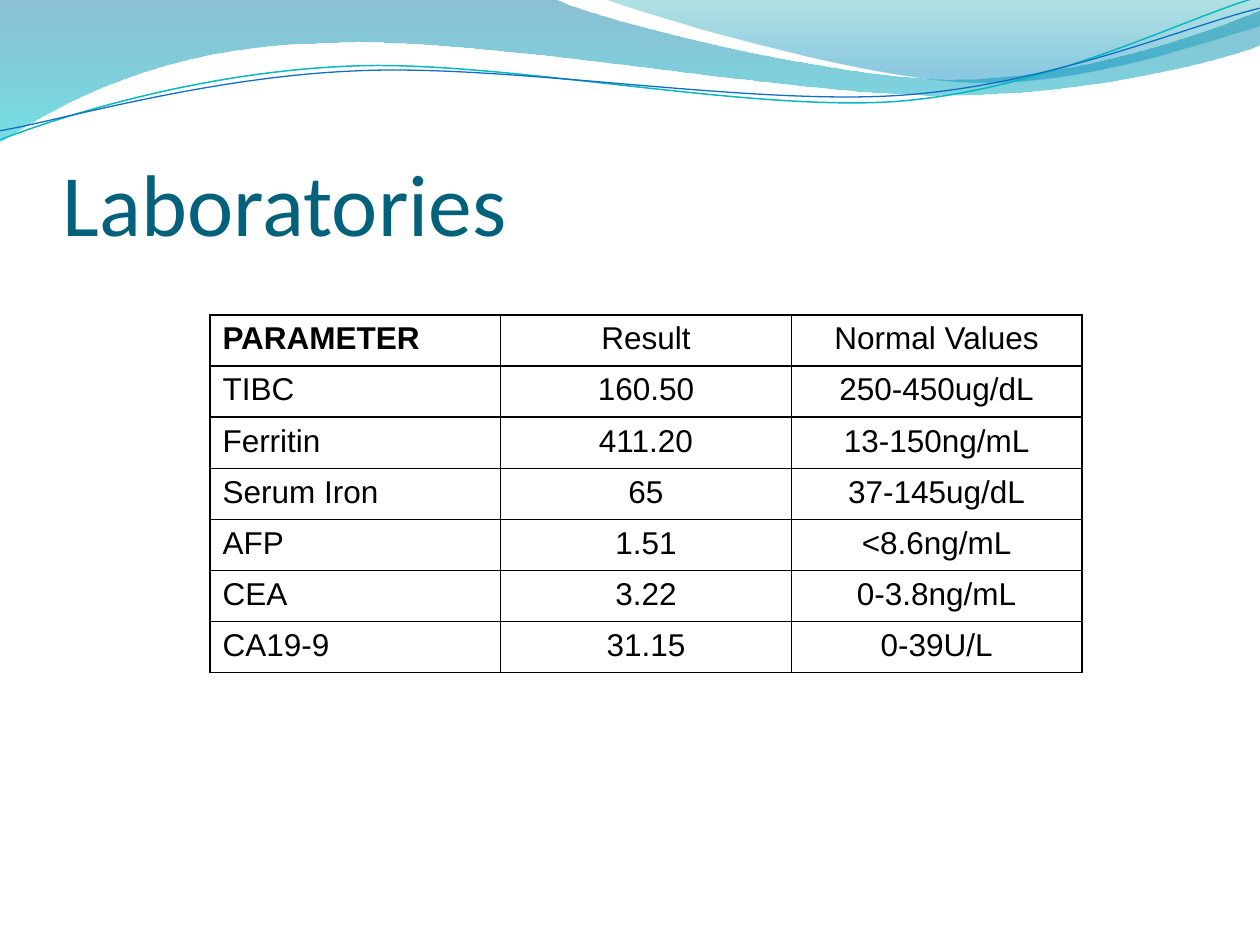
"""Build the Laboratories slide: wave header, title and results table."""
from dataclasses import dataclass

from lxml import etree
from pptx import Presentation
from pptx import util as u
from pptx.dml.color import RGBColor
from pptx.enum import text
from pptx.oxml import ns

EMU_PER_PX = 914400 / 126
COLORS = {
    "title": "04617B", "ink": "000000",
    "deep": "0074A1", "aqua": "00C6CF", "teal": "00A1A9", "sky": "008BBF",
    "teal_line": "0AB8BF", "blue_line": "0F6FC6",
}
ROWS = [
    ("PARAMETER", "Result", "Normal Values"),
    ("TIBC", "160.50", "250-450ug/dL"),
    ("Ferritin", "411.20", "13-150ng/mL"),
    ("Serum Iron", "65", "37-145ug/dL"),
    ("AFP", "1.51", "<8.6ng/mL"),
    ("CEA", "3.22", "0-3.8ng/mL"),
    ("CA19-9", "31.15", "0-39U/L"),
]
Point = tuple[int, int]


@dataclass(frozen=True)
class Stop:
    position: float
    color: str
    opacity: int


@dataclass(frozen=True)
class Wave:
    """A path whose segments hold one point for a line, three for a curve."""
    start: Point
    segments: list[tuple[Point, ...]]
    stops: tuple[Stop, ...] = ()
    line_color: str = ""
    line_width: float = 0
    rotation: float = 0


WAVES = [
    Wave((0, 0), [
        ((554, -1),),
        ((600, 21), (837, 79), (955, 79)),
        ((1075, 79), (1207, 33), (1260, 11)),
        ((1261, 45),),
        ((1239, 55), (1096, 96), (940, 95)),
        ((784, 95), (481, 35), (324, 43)),
        ((163, 45), (58, 105), (-1, 142)),
    ], stops=(Stop(0, "deep", 45), Stop(1, "aqua", 55))),
    Wave((604, -1), [
        ((641, 14), (859, 78), (969, 82)),
        ((1079, 87), (1211, 40), (1260, 26)),
        ((1260, 0),),
    ], stops=(Stop(0, "teal", 30), Stop(0.8, "sky", 45))),
    Wave((-2, 110), [
        ((58, 90), (199, 52), (350, 53)),
        ((499, 53), (745, 118), (896, 114)),
        ((1049, 109), (1184, 45), (1260, 27)),
    ], line_color="teal_line", line_width=0.85, rotation=357.3),
    Wave((-2, 101), [
        ((57, 94), (207, 57), (357, 58)),
        ((509, 58), (750, 112), (902, 108)),
        ((1052, 104), (1189, 52), (1262, 38)),
    ], line_color="blue_line", line_width=0.75, rotation=357.3),
]


def px(length: float) -> u.Emu:
    return u.Emu(round(length * EMU_PER_PX))


def rgb(name: str) -> RGBColor:
    return RGBColor.from_string(COLORS[name])


def bend_segments(shape, segments: list[tuple[Point, ...]]) -> None:
    """Merge each run of three line steps into one cubic curve."""
    steps = iter(list(shape.element.iter(ns.qn("a:lnTo"))))
    for segment in segments:
        group = [next(steps) for _ in segment]
        if len(group) == 3:
            curve = etree.Element(ns.qn("a:cubicBezTo"))
            group[0].addprevious(curve)
            for step in group:
                curve.append(step[0])
                step.getparent().remove(step)


def draw_wave(slide, wave: Wave) -> None:
    points = [wave.start] + [point for segment in wave.segments for point in segment]
    corners = [(px(x), px(y)) for x, y in points]
    builder = slide.shapes.build_freeform(*corners[0])
    builder.add_line_segments(corners[1:], close=bool(wave.stops))
    shape = builder.convert_to_shape()
    bend_segments(shape, wave.segments)
    shape.rotation = wave.rotation
    shape.shadow.inherit = False
    if wave.stops:
        shape.fill.gradient()
        shape.fill.gradient_angle = 270
        for target, stop in zip(shape.fill.gradient_stops, wave.stops):
            target.position = stop.position
            target.color.rgb = rgb(stop.color)
        for color, stop in zip(shape.element.iter(ns.qn("a:srgbClr")), wave.stops):
            etree.SubElement(color, ns.qn("a:alpha"), val=str(stop.opacity * 1000))
        shape.line.fill.background()
    else:
        shape.fill.background()
        shape.line.color.rgb = rgb(wave.line_color)
        shape.line.width = u.Pt(wave.line_width)


def write_text(frame, content: str, *, size: int, font: str, color: str,
               bold: bool = False, align=text.PP_ALIGN.LEFT) -> None:
    paragraph = frame.paragraphs[0]
    paragraph.alignment = align
    run = paragraph.add_run()
    run.text = content
    run.font.size, run.font.name, run.font.bold = u.Pt(size), font, bold
    run.font.color.rgb = rgb(color)


def draw_title(slide, content: str) -> None:
    frame = slide.shapes.add_textbox(px(63), px(97), px(1134), px(157)).text_frame
    frame.word_wrap = True
    frame.vertical_anchor = text.MSO_ANCHOR.BOTTOM
    frame.margin_left = frame.margin_right = frame.margin_bottom = 0
    frame.margin_top = px(6)
    write_text(frame, content, size=50, font="Calibri", color="title")


def add_borders(cell) -> None:
    properties = cell._tc.get_or_add_tcPr()
    for side in "LRTB":
        line = etree.SubElement(properties, ns.qn(f"a:ln{side}"), w=str(u.Pt(1)))
        fill = etree.SubElement(line, ns.qn("a:solidFill"))
        etree.SubElement(fill, ns.qn("a:srgbClr"), val=COLORS["ink"])


def draw_results(slide) -> None:
    width, height = 872, 358
    table = slide.shapes.add_table(len(ROWS), len(ROWS[0]), px(210), px(315),
                                   px(width), px(height)).table
    table.first_row = table.horz_banding = False
    for column in table.columns:
        column.width = px(width / len(ROWS[0]))
    for row_index, values in enumerate(ROWS):
        table.rows[row_index].height = px(height / len(ROWS))
        for column_index, value in enumerate(values):
            cell = table.cell(row_index, column_index)
            add_borders(cell)
            cell.fill.background()
            align = text.PP_ALIGN.CENTER if column_index else text.PP_ALIGN.LEFT
            write_text(cell.text_frame, value, size=18, font="Arial", color="ink",
                       bold=row_index == column_index == 0, align=align)


def main() -> None:
    presentation = Presentation()
    presentation.slide_width, presentation.slide_height = px(1260), px(945)
    slide = presentation.slides.add_slide(presentation.slide_layouts[6])
    for wave in WAVES:
        draw_wave(slide, wave)
    draw_title(slide, "Laboratories")
    draw_results(slide)
    presentation.save("out.pptx")


if __name__ == "__main__":
    main()
